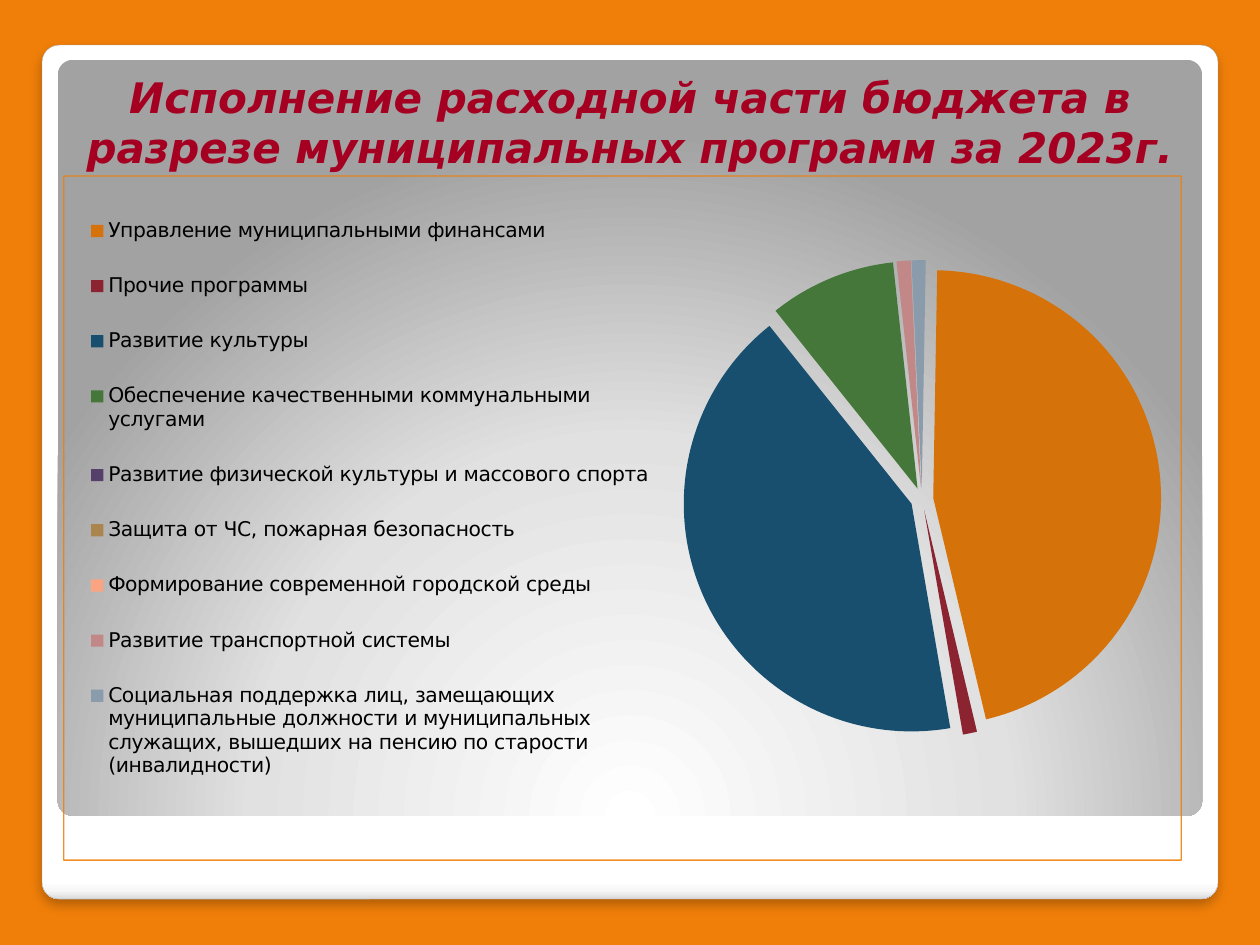
"""Build a slide with the budget spending by municipal programme as an exploded pie."""
import pptx
import pptx.chart.data
import pptx.dml.color
import pptx.enum.chart
import pptx.enum.shapes
import pptx.enum.text
import pptx.oxml
import pptx.util

Pt = pptx.util.Pt
FONT = "DejaVu Sans"
HEADLINE = "Исполнение расходной части бюджета в разрезе муниципальных программ за 2023г."
PROGRAMMES = [
    ("Управление муниципальными финансами", 46, "D57209"),
    ("Прочие программы", 1, "8C2330"),
    ("Развитие культуры", 42, "194F6E"),
    ("Обеспечение качественными коммунальными услугами", 9, "447739"),
    ("Развитие физической культуры и массового спорта", 0, "544069"),
    ("Защита от ЧС, пожарная безопасность", 0, "AA854E"),
    ("Формирование современной городской среды", 0, "FBA481"),
    ("Развитие транспортной системы", 1, "C28888"),
    ("Социальная поддержка лиц, замещающих муниципальные должности и муниципальных "
     "служащих, вышедших на пенсию по старости (инвалидности)", 1, "8A9BAB"),
]
FRAME_STOPS = [(0, "FFFFFF"), (98, "FFFFFF"), (99, "F7F7F7"), (100, "DADADA")]
PANEL_STOPS = [(0, "FFFFFF"), (55, "E1E1E1"), (100, "A2A2A2")]
DOWNWARD = '<a:lin ang="5400000" scaled="0"/>'
FROM_BELOW = ('<a:path path="circle"><a:fillToRect l="50000" t="175000" '
              'r="50000" b="-75000"/></a:path>')
FRAME_SHADOW = ('<a:outerShdw blurRad="76200" dist="50800" dir="5400000" rotWithShape="0">'
                '<a:srgbClr val="000000"><a:alpha val="25000"/></a:srgbClr></a:outerShdw>')
NAMESPACES = ('xmlns:a="http://schemas.openxmlformats.org/drawingml/2006/main" '
              'xmlns:c="http://schemas.openxmlformats.org/drawingml/2006/chart"')


def colour(value):
    return pptx.dml.color.RGBColor.from_string(value)


def element(tag, inner="", attributes=""):
    return pptx.oxml.parse_xml(f"<{tag} {NAMESPACES} {attributes}>{inner}</{tag}>")


def apply(target, formats):
    for key, value in formats.items():
        setattr(target, key, value)


def add_card(slide, box, stops, direction):
    card = slide.shapes.add_shape(
        pptx.enum.shapes.MSO_SHAPE.ROUNDED_RECTANGLE, *map(Pt, box))
    card.adjustments[0] = 0.02
    card.shadow.inherit = False
    card.line.fill.background()
    marks = "".join(f'<a:gs pos="{place * 1000}"><a:srgbClr val="{value}"/></a:gs>'
                    for place, value in stops)
    gradient = element("a:gradFill", f"<a:gsLst>{marks}</a:gsLst>{direction}")
    card._element.spPr.find(pptx.oxml.ns.qn("a:prstGeom")).addnext(gradient)
    return card


def manual_layout(x, y, w, h, inner=False):
    target = '<c:layoutTarget val="inner"/>' if inner else ""
    modes = '<c:xMode val="edge"/><c:yMode val="edge"/>'
    sizes = "".join(f'<c:{key} val="{value}"/>' for key, value in zip("xywh", (x, y, w, h)))
    return element("c:layout", f"<c:manualLayout>{target}{modes}{sizes}</c:manualLayout>")


def place(part, layout, index):
    for old in part.findall(pptx.oxml.ns.qn("c:layout")):
        part.remove(old)
    part.insert(index, layout)


def add_headline(slide):
    headline = slide.shapes.add_textbox(*map(Pt, (36, 42, 648, 59.8))).text_frame
    apply(headline, {"word_wrap": True,
                     "vertical_anchor": pptx.enum.text.MSO_ANCHOR.BOTTOM})
    paragraph = headline.paragraphs[0]
    paragraph.alignment = pptx.enum.text.PP_ALIGN.CENTER
    run = paragraph.add_run()
    run.text = HEADLINE
    apply(run.font, {"name": FONT, "size": Pt(24), "bold": True, "italic": True})
    run.font.color.rgb = colour("A50021")


def add_spending_pie(slide):
    names, shares, colours = zip(*PROGRAMMES)
    spending = pptx.chart.data.CategoryChartData()
    spending.categories = names
    spending.add_series("Series 1", shares)
    chart = slide.shapes.add_chart(
        pptx.enum.chart.XL_CHART_TYPE.PIE, *map(Pt, (36, 100.2, 639.4, 391.7)), spending).chart
    apply(chart, {"has_title": False, "has_legend": True})
    apply(chart.font, {"name": FONT, "size": Pt(18)})
    chart.font.color.rgb = colour("000000")
    apply(chart.legend, {"position": pptx.enum.chart.XL_LEGEND_POSITION.LEFT,
                         "include_in_layout": False})
    apply(chart.legend.font, {"name": FONT, "size": Pt(11.6)})
    chart.legend.font.color.rgb = colour("000000")

    pie = chart.plots[0]
    pie.vary_by_categories = True
    series = pie.series[0]
    for index, value in enumerate(colours):
        fill = series.points[index].format.fill
        fill.solid()
        fill.fore_color.rgb = colour(value)
    qn = pptx.oxml.ns.qn
    series._element.find(qn("c:dPt")).addprevious(element("c:explosion", attributes='val="5"'))
    for old in pie._element.findall(qn("c:firstSliceAng")):
        pie._element.remove(old)
    pie._element.append(element("c:firstSliceAng", attributes='val="1"'))

    space = chart._chartSpace
    place(space.chart.plotArea, manual_layout(0.554, 0.098, 0.428, 0.749, True), 0)
    place(chart.legend._element, manual_layout(0.019, 0.017, 0.51, 0.91), 1)
    space.chart.addnext(element(
        "c:spPr", '<a:noFill/><a:ln w="9525"><a:solidFill><a:srgbClr val="F07F09">'
                  '<a:alpha val="87000"/></a:srgbClr></a:solidFill></a:ln>'))


def main():
    deck = pptx.Presentation()
    apply(deck, {"slide_width": Pt(720), "slide_height": Pt(540)})
    slide = deck.slides.add_slide(deck.slide_layouts[6])
    slide.background.fill.solid()
    slide.background.fill.fore_color.rgb = colour("F07F09")

    frame = add_card(slide, (24, 25.8, 672, 488), FRAME_STOPS, DOWNWARD)
    frame.line.color.rgb = colour("A4A4A4")
    frame.line.width = Pt(0.16)
    effects = frame._element.spPr.find(pptx.oxml.ns.qn("a:effectLst"))
    effects.append(pptx.oxml.parse_xml(
        FRAME_SHADOW.replace("<a:outerShdw", f"<a:outerShdw {NAMESPACES}", 1)))
    add_card(slide, (33, 34.2, 654, 432), PANEL_STOPS, FROM_BELOW)
    add_headline(slide)
    add_spending_pie(slide)
    deck.save("out.pptx")


if __name__ == "__main__":
    main()
